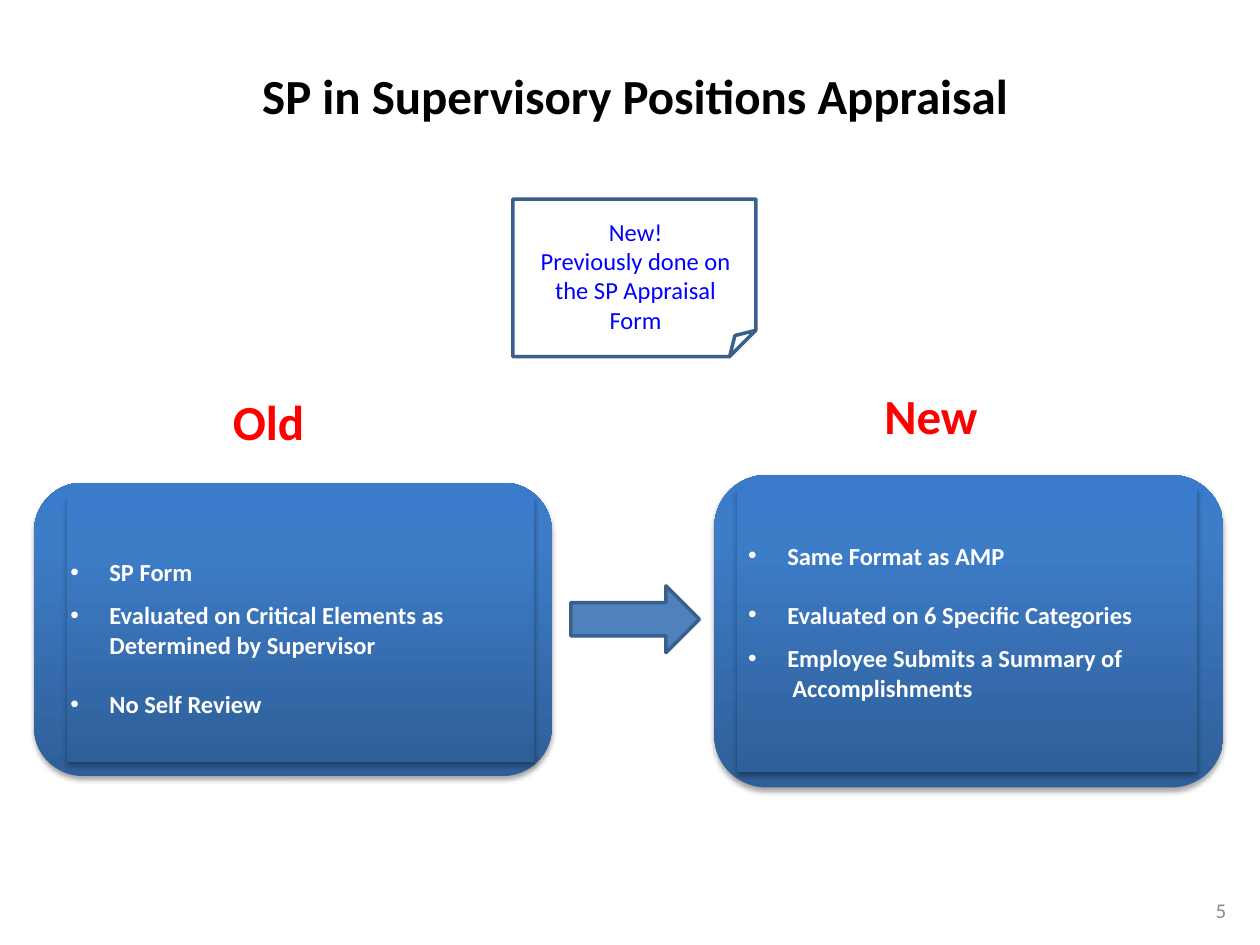
import copy
import pptx
import pptx.dml.color
import pptx.enum.shapes
import pptx.enum.text
import pptx.oxml
import pptx.oxml.ns
import pptx.util

WIDE, HIGH = pptx.util.Inches(10), pptx.util.Inches(7.5)
COLS, ROWS = 100, 75
HUES = {"ink": "000000", "red": "FF0000", "note": "0000FF", "pale": "FFFFFF",
        "gray": "8C8C8C", "dark": "2F5F99", "mid": "3D7CC7", "top": "3A7CCB",
        "arrow": "4F81BD", "edge": "3A5F8C"}
FADE = [(0, "dark"), (0.8, "mid"), (1, "top")]
KIND = pptx.enum.shapes.MSO_SHAPE
SIDE = pptx.enum.text.PP_ALIGN
HOLD = pptx.enum.text.MSO_ANCHOR
OLD = [("SP Form", 0, True), ("Evaluated on Critical Elements as", 8, True),
       ("Determined by Supervisor", 0, False), ("No Self Review", 17, True)]
NEW = [("Same Format as AMP", 0, True),
       ("Evaluated on 6 Specific Categories", 17, True),
       ("Employee Submits a Summary of", 8, True),
       ("Accomplishments", 0, False)]


def hue(name):
    """Return the named colour."""
    return pptx.dml.color.RGBColor.from_string(HUES[name])


def across(cols):
    """Return the length of a number of grid columns."""
    return round(WIDE * cols / COLS)


def down(rows):
    """Return the length of a number of grid rows."""
    return round(HIGH * rows / ROWS)


def place(area):
    """Turn a grid area into left, top, width and height."""
    x, y, w, h = area
    return across(x), down(y), across(w), down(h)


def write(para, text, size, color, bold):
    """Add one run to a paragraph."""
    run = para.add_run()
    run.text = text
    run.font.name = "Calibri"
    run.font.size = pptx.util.Pt(size)
    run.font.bold = bold
    run.font.color.rgb = hue(color)


def add_text(shapes, area, lines, size, color, bold=False,
             align=SIDE.LEFT, anchor=HOLD.TOP, head=0.5):
    """Add a text box with one paragraph for each line."""
    frame = shapes.add_textbox(*place(area)).text_frame
    frame.word_wrap = True
    frame.vertical_anchor = anchor
    frame.margin_top = down(head)
    for i, line in enumerate(lines):
        para = frame.add_paragraph() if i else frame.paragraphs[0]
        para.alignment = align
        write(para, line, size, color, bold)
    return frame


def add_shape(shapes, kind, area, fill=None):
    """Add an outlined shape with a plain fill or none."""
    shape = shapes.add_shape(kind, *place(area))
    shape.shadow.inherit = False
    shape.line.color.rgb = hue("edge")
    shape.line.width = pptx.util.Pt(2)
    if fill:
        shape.fill.solid()
        shape.fill.fore_color.rgb = hue(fill)
    else:
        shape.fill.background()


def add_panel(shapes, kind, area):
    """Add a shape with a gradient fill and a soft shadow."""
    shape = shapes.add_shape(kind, *place(area))
    shape.shadow.inherit = False
    shape.line.fill.background()
    shape.fill.gradient()
    shape.fill.gradient_angle = 90
    tag = pptx.oxml.ns.qn
    stops = shape.element.find(".//" + tag("a:gsLst"))
    stops.append(copy.deepcopy(stops[-1]))
    for stop, (pos, name) in zip(shape.fill.gradient_stops, FADE):
        stop.position = pos
        stop.color.rgb = hue(name)
    shape.element.find(".//" + tag("a:effectLst")).append(pptx.oxml.parse_xml(
        f'<a:outerShdw {pptx.oxml.ns.nsdecls("a")} blurRad="40000" dist="23000" '
        'dir="5400000" rotWithShape="0"><a:srgbClr val="000000">'
        '<a:alpha val="35000"/></a:srgbClr></a:outerShdw>'))


def add_card(slide, outer, inner, area, items, hang):
    """Add a group of two panels and a bulleted list."""
    shapes = slide.shapes.add_group_shape().shapes
    add_panel(shapes, KIND.ROUNDED_RECTANGLE, outer)
    add_panel(shapes, KIND.RECTANGLE, inner)
    frame = add_text(shapes, area, [item[0] for item in items], 14, "pale",
                     True, head=4.2)
    for para, (_, gap, mark) in zip(frame.paragraphs, items):
        para.space_before = pptx.util.Pt(gap)
        props = para._p.get_or_add_pPr()
        props.set("marL", str(across(3.1 if mark else hang)))
        props.set("indent", str(across(-3.1 if mark else 0)))
        if mark:
            props.append(pptx.oxml.parse_xml(
                f'<a:buFont {pptx.oxml.ns.nsdecls("a")} typeface="Arial"/>'))
            props.append(pptx.oxml.parse_xml(
                f'<a:buChar {pptx.oxml.ns.nsdecls("a")} char="•"/>'))


def main():
    """Build the slide and save it."""
    deck = pptx.Presentation()
    deck.slide_width, deck.slide_height = WIDE, HIGH
    slide = deck.slides.add_slide(deck.slide_layouts[6])
    shapes = slide.shapes
    add_text(shapes, (17.5, 29.2, 44.2, 7), ["Old"], 28, "red", True,
             anchor=HOLD.BOTTOM)
    add_text(shapes, (75, 70.2, 23.3, 4), ["5"], 12, "gray",
             align=SIDE.RIGHT, anchor=HOLD.MIDDLE)
    add_text(shapes, (69.2, 28.8, 30.8, 7), ["New"], 28, "red", True,
             anchor=HOLD.BOTTOM)
    add_card(slide, (2.7, 38.3, 41.1, 23.3), (5.3, 39.4, 37.1, 21.1),
             (4.6, 40, 42.1, 20.2), OLD, 3.1)
    add_card(slide, (56.7, 37.7, 40.4, 24.8), (58.5, 38.8, 36.5, 22.5),
             (58.4, 38.7, 37.7, 20.9), NEW, 3.5)
    add_shape(shapes, KIND.RIGHT_ARROW, (45.3, 46.5, 10.2, 5.3), "arrow")
    add_text(shapes, (8.3, 0, 84.2, 15.1),
             ["SP in Supervisory Positions Appraisal"], 28, "ink", True,
             SIDE.CENTER, head=5.2)
    add_shape(shapes, KIND.FOLDED_CORNER, (40.7, 15.8, 19.3, 12.5))
    add_text(shapes, (40.8, 16.7, 19.3, 10.4),
             ["New!", "Previously done on the SP Appraisal Form"], 14, "note",
             align=SIDE.CENTER)
    deck.save("out.pptx")


if __name__ == "__main__":
    main()
